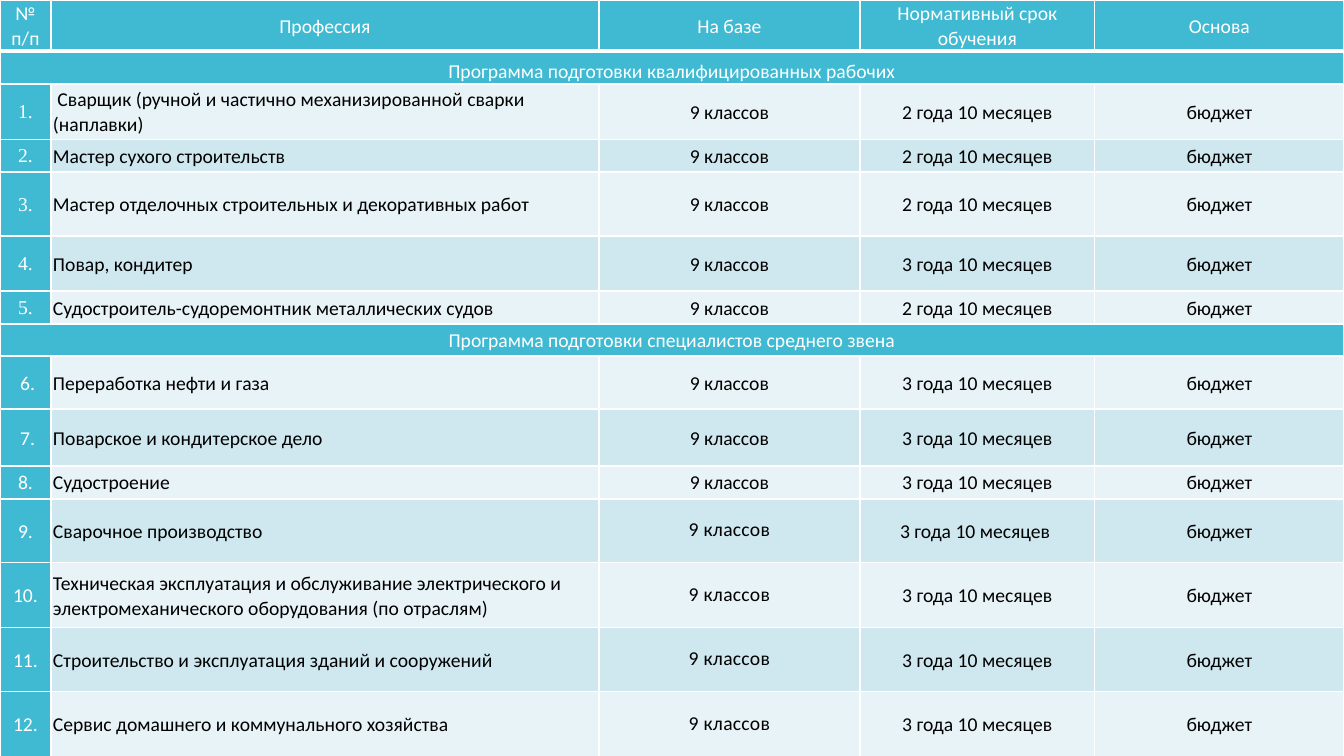
from lxml import etree
from pptx import Presentation
from pptx.dml.color import RGBColor
from pptx.enum.text import MSO_ANCHOR as Anchor, PP_ALIGN as Align
from pptx.oxml.ns import qn
from pptx.util import Pt

# Content: a row is (height, number, profession, term); a section is (height, title)
BASE, FUNDING = "9 классов", "бюджет"
TWO_YEARS, THREE_YEARS = "2 года 10 месяцев", "3 года 10 месяцев"
HEADINGS = ["№ п/п", "Профессия", "На базе", "Нормативный срок обучения", "Основа"]
HEADING_HEIGHT = 51
PROGRAMMES = [
    (33, "Программа подготовки квалифицированных рабочих"),
    (54, "1.", " Сварщик (ручной и частично механизированной сварки (наплавки)", TWO_YEARS),
    (33, "2.", "Мастер сухого строительств", TWO_YEARS),
    (64, "3.", "Мастер отделочных строительных и декоративных работ", TWO_YEARS),
    (55, "4.", "Повар, кондитер", THREE_YEARS),
    (33, "5.", "Cудостроитель-судоремонтник металлических судов", TWO_YEARS),
    (32, "Программа подготовки специалистов среднего звена"),
    (53, " 6.", "Переработка нефти и газа", THREE_YEARS),
    (57, " 7.", "Поварское и кондитерское дело", THREE_YEARS),
    (33, "8.", "Судостроение", THREE_YEARS),
    (64, "9.", "Сварочное производство", THREE_YEARS + " "),
    (65, "10.", "Техническая эксплуатация и обслуживание электрического и "
                "электромеханического оборудования (по отраслям)", THREE_YEARS),
    (64, "11.", "Строительство и эксплуатация зданий и сооружений", THREE_YEARS),
    (65, "12.", "Сервис домашнего и коммунального хозяйства", THREE_YEARS),
]
COLUMN_WIDTHS = [51, 548, 261, 235, 249]
FIRST_SECTION, SECOND_SECTION = 1, 7
FIRST_SPACED_ROW = 11  # from here the base column has exact line spacing

WHITE = RGBColor(0xFF, 0xFF, 0xFF)
BLACK = RGBColor(0, 0, 0)
TEAL = RGBColor(0x40, 0xBA, 0xD2)
PALE = RGBColor(0xE8, 0xF3, 0xF7)
LIGHT = RGBColor(0xCF, 0xE7, 0xEE)


def px(length):
    return round(length * 914400 / 100.8)


def add_borders(cell, bottom):
    """Draw white lines, one point wide, with a chosen bottom width."""
    properties = cell._tc.get_or_add_tcPr()
    for position, (side, width) in enumerate(
            [("lnL", 1), ("lnR", 1), ("lnT", 1), ("lnB", bottom)]):
        line = etree.Element(qn(f"a:{side}"), w=str(Pt(width)))
        fill = etree.SubElement(line, qn("a:solidFill"))
        etree.SubElement(fill, qn("a:srgbClr"), val=str(WHITE))
        properties.insert(position, line)


def fill_cell(cell, text, fill, color, font="Calibri", align=Align.CENTER,
              inset=0, anchor=Anchor.MIDDLE, bottom=1, spaced=False):
    cell.fill.solid()
    cell.fill.fore_color.rgb = fill
    add_borders(cell, bottom)
    cell.vertical_anchor = anchor
    cell.margin_left = cell.margin_right = px(inset)
    cell.margin_top = cell.margin_bottom = px(inset)
    cell.text_frame.text = text
    paragraph = cell.text_frame.paragraphs[0]
    paragraph.alignment = align
    paragraph.line_spacing = Pt(15.6) if spaced else 1.07
    paragraph.space_after = Pt(8)
    for run in paragraph.runs:
        run.font.size = Pt(14)
        run.font.name = font
        run.font.color.rgb = color
        if spaced:
            run.font._element.set("spc", "20")


def main():
    deck = Presentation()
    deck.slide_width, deck.slide_height = px(1344), px(756)
    slide = deck.slides.add_slide(deck.slide_layouts[6])

    # Table grid
    heights = [HEADING_HEIGHT] + [entry[0] for entry in PROGRAMMES]
    programme_table = slide.shapes.add_table(
        len(heights), len(COLUMN_WIDTHS), 0, 0,
        px(sum(COLUMN_WIDTHS)), px(sum(heights))).table
    for column, width in zip(programme_table.columns, COLUMN_WIDTHS):
        column.width = px(width)
    for row, height in zip(programme_table.rows, heights):
        row.height = px(height)

    # Heading row
    for cell, heading in zip(programme_table.rows[0].cells, HEADINGS):
        fill_cell(cell, heading, TEAL, WHITE, bottom=3)

    # Sections and professions
    for index, (_, *entry) in enumerate(PROGRAMMES, start=1):
        cells = list(programme_table.rows[index].cells)
        if len(entry) == 1:
            cells[0].merge(cells[-1])
            anchor = Anchor.BOTTOM if index == FIRST_SECTION else Anchor.MIDDLE
            fill_cell(cells[0], entry[0], TEAL, WHITE, anchor=anchor)
            for spanned in cells[1:]:
                add_borders(spanned, 1)
            continue
        number, profession, term = entry
        in_second = index > SECOND_SECTION
        section = SECOND_SECTION if in_second else FIRST_SECTION
        band = PALE if (index - section) % 2 else LIGHT
        fill_cell(cells[0], number, TEAL, WHITE,
                  font="Calibri" if in_second else "Times New Roman")
        fill_cell(cells[1], profession, band, BLACK, align=Align.LEFT, inset=2)
        fill_cell(cells[2], BASE, band, BLACK, spaced=index >= FIRST_SPACED_ROW)
        fill_cell(cells[3], term, band, BLACK, inset=2 if in_second else 0)
        fill_cell(cells[4], FUNDING, band, BLACK)

    deck.save("out.pptx")


if __name__ == "__main__":
    main()
